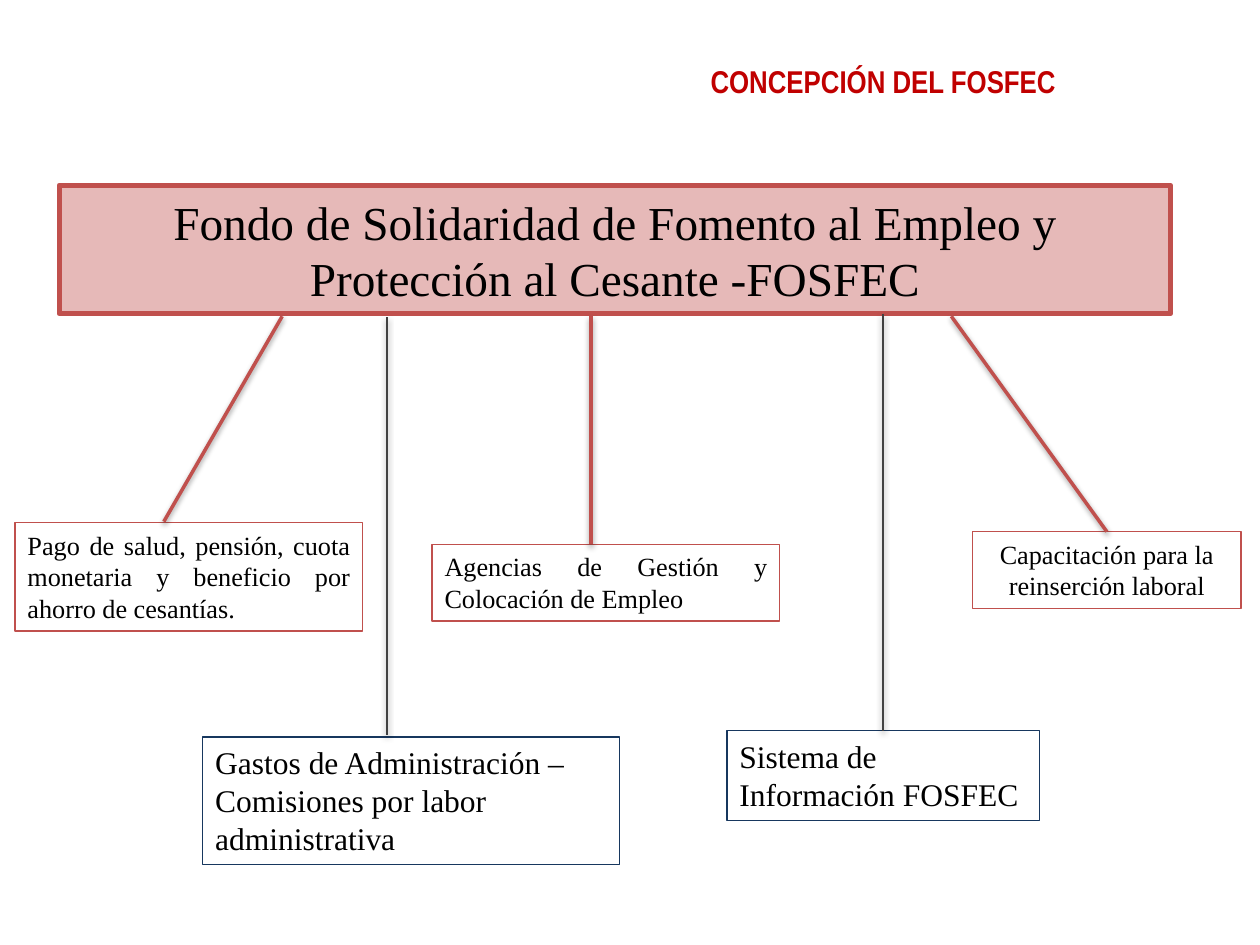
import pptx
import pptx.dml.color
import pptx.enum.shapes
import pptx.enum.text
import pptx.oxml
import pptx.oxml.ns
import pptx.util

Inches = pptx.util.Inches
Pt = pptx.util.Pt
RGBColor = pptx.dml.color.RGBColor
Align = pptx.enum.text.PP_ALIGN
Anchor = pptx.enum.text.MSO_ANCHOR
Fit = pptx.enum.text.MSO_AUTO_SIZE

BLACK = RGBColor(0x00, 0x00, 0x00)
RED = RGBColor(0xC0, 0x50, 0x4D)
PINK = RGBColor(0xE6, 0xB9, 0xB8)
CRIMSON = RGBColor(0xC0, 0x00, 0x00)
NAVY = RGBColor(0x17, 0x37, 0x5E)
GRAY = RGBColor(0x40, 0x40, 0x40)

SHADOW = (
    f'<a:effectLst {pptx.oxml.ns.nsdecls("a")}>'
    '<a:outerShdw blurRad="40000" dist="20000" dir="5400000" rotWithShape="0">'
    '<a:srgbClr val="000000"><a:alpha val="38000"/></a:srgbClr>'
    '</a:outerShdw></a:effectLst>'
)


class Chart:
    """Draws the parts of the fund diagram on one slide."""

    font = {"name": "Times New Roman", "bold": False}

    def __init__(self, slide):
        self.slide = slide

    def put_text(self, shape, text, size, align, color=BLACK, fit=Fit.SHAPE_TO_FIT_TEXT,
                 anchor=Anchor.TOP, **font):
        frame = shape.text_frame
        form = {"word_wrap": True, "auto_size": fit, "vertical_anchor": anchor}
        for key, value in form.items():
            setattr(frame, key, value)
        para = frame.paragraphs[0]
        para.alignment = align
        run = para.add_run()
        run.text = text
        for key, value in {**self.font, "size": Pt(size), **font}.items():
            setattr(run.font, key, value)
        run.font.color.rgb = color

    def label(self, place, text, size, align, **form):
        shape = self.slide.shapes.add_textbox(*map(Inches, place))
        self.put_text(shape, text, size, align, **form)

    def box(self, place, text, size, align, edge, width=0.75, fill=None, **form):
        kind = pptx.enum.shapes.MSO_SHAPE.RECTANGLE
        shape = self.slide.shapes.add_shape(kind, *map(Inches, place))
        shape.shadow.inherit = False
        if fill is None:
            shape.fill.background()
        else:
            shape.fill.solid()
            shape.fill.fore_color.rgb = fill
        shape.line.color.rgb = edge
        shape.line.width = Pt(width)
        self.put_text(shape, text, size, align, **form)
        return shape

    def line(self, start, end, color, width, box=None):
        """Draw a shadowed line, joined to the top of box if one is given."""
        kind = pptx.enum.shapes.MSO_CONNECTOR.STRAIGHT
        link = self.slide.shapes.add_connector(kind, *map(Inches, start + end))
        if box is not None:
            link.end_connect(box, 0)
        link.line.color.rgb = color
        link.line.width = Pt(width)
        link._element.spPr.append(pptx.oxml.parse_xml(SHADOW))


def main():
    deck = pptx.Presentation()
    deck.slide_width, deck.slide_height = Inches(10), Inches(7.5)
    chart = Chart(deck.slides.add_slide(deck.slide_layouts[6]))

    chart.box((0.47, 1.47, 8.82, 1.02),
              "Fondo de Solidaridad de Fomento al Empleo y Protección al Cesante -FOSFEC",
              27, Align.CENTER, RED, 3, PINK, fit=Fit.NONE, anchor=Anchor.MIDDLE)

    chart.box((0.12, 4.15, 2.76, 0.86),
              "Pago de salud, pensión, cuota monetaria y beneficio por ahorro de cesantías.",
              15, Align.JUSTIFY, RED)
    chart.box((3.43, 4.32, 2.76, 0.61), "Agencias de Gestión y Colocación de Empleo",
              15, Align.JUSTIFY, RED)
    course = chart.box((7.72, 4.22, 2.13, 0.61), "Capacitación para la reinserción laboral",
                       15, Align.CENTER, RED)
    system = chart.box((5.77, 5.8, 2.48, 0.71), "Sistema de Información FOSFEC",
                       18, Align.LEFT, NAVY)
    chart.box((1.61, 5.85, 3.31, 1.01),
              "Gastos de Administración – Comisiones por labor administrativa",
              18, Align.LEFT, NAVY)

    for start, end, color, width, box in (
        ((2.24, 2.51), (1.3, 4.14), RED, 2, None),
        ((4.69, 2.51), (4.69, 4.32), RED, 2, None),
        ((7.55, 2.51), (8.78, 4.22), RED, 2, course),
        ((7.01, 2.49), (7.01, 5.8), GRAY, 1, system),
        ((3.07, 2.52), (3.07, 5.83), GRAY, 1, None),
    ):
        chart.line(start, end, color, width, box)

    chart.label((5.08, 0.44, 3.86, 0.4), "CONCEPCIÓN DEL FOSFEC", 18, Align.CENTER,
                color=CRIMSON, name="Arial Narrow", bold=True)

    deck.save("out.pptx")


if __name__ == "__main__":
    main()
